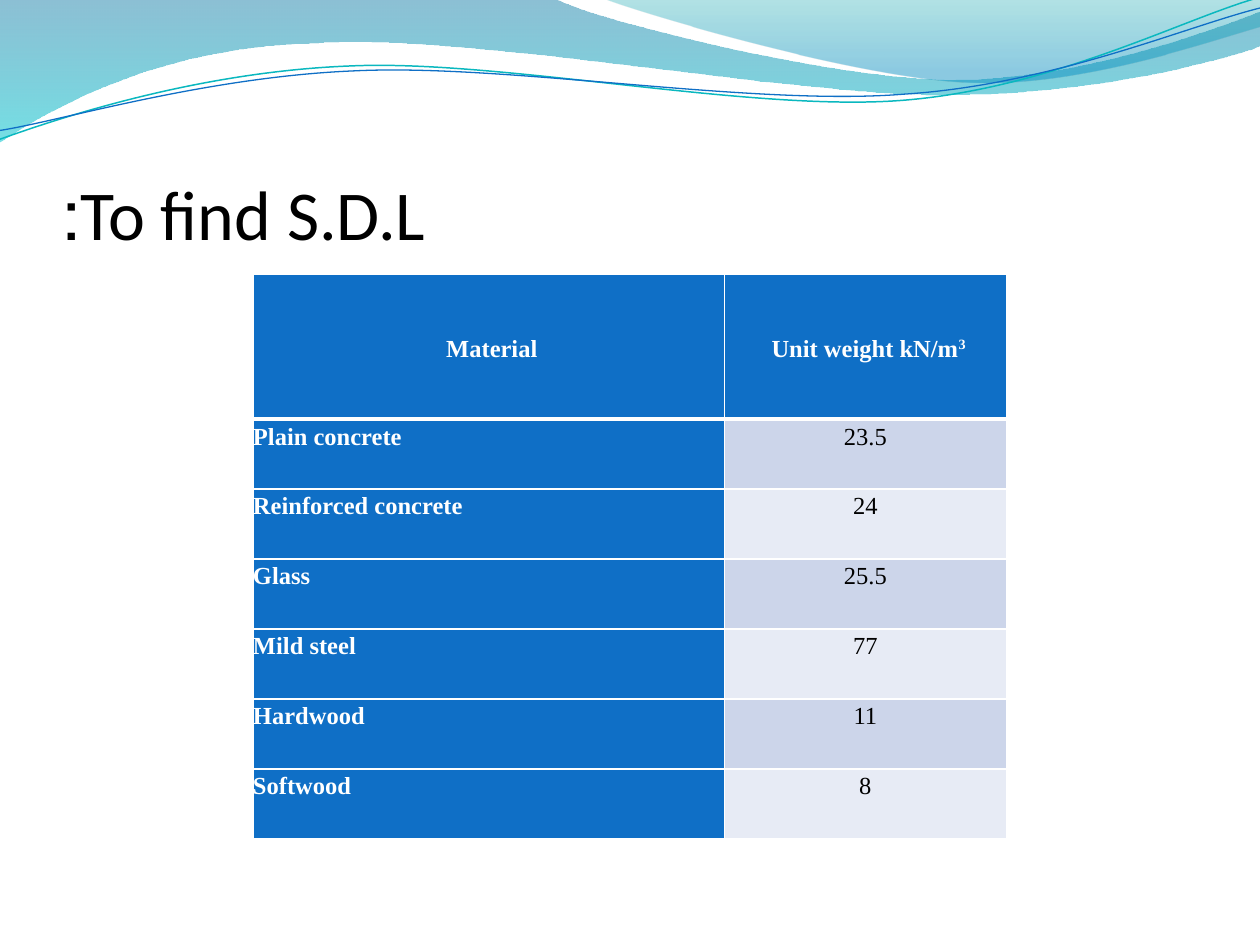
from lxml import etree
from pptx import Presentation
from pptx.dml.color import RGBColor
from pptx.enum.text import MSO_ANCHOR, PP_ALIGN
from pptx.oxml.ns import qn
from pptx.util import Cm, Pt

LEFT, CENTER = PP_ALIGN.LEFT, PP_ALIGN.CENTER
MIDDLE, BOTTOM = MSO_ANCHOR.MIDDLE, MSO_ANCHOR.BOTTOM
INCH = 2.54  # centimetres


def color(hex_code):
    return RGBColor.from_string(hex_code)


def add_wave(shapes, segments, closed):
    """Draw segments of one point (line) or three points (cubic curve)."""
    points = [(Cm(x * INCH), Cm(y * INCH))
              for seg in segments for x, y in zip(seg[::2], seg[1::2])]
    builder = shapes.build_freeform(*points[0])
    builder.add_line_segments(points[1:], close=closed)
    s = builder.convert_to_shape()
    s.shadow.inherit = False

    # Join each run of three points into one curve
    lines = iter(list(s._element.iter(qn("a:lnTo"))))
    for seg in segments[1:]:
        line = next(lines)
        if len(seg) == 6:
            line.tag = qn("a:cubicBezTo")
            for _ in range(2):
                extra = next(lines)
                line.append(extra[0])
                extra.getparent().remove(extra)
    return s


prs = Presentation()
prs.slide_width, prs.slide_height = Cm(25.4), Cm(19.05)
slide = prs.slides.add_slide(prs.slide_layouts[6])

# Gradient waves: outline in inches, then (position, colour, opacity %) stops
bands = [
    ([(0, 0), (4.4, -0.01), (4.76, 0.17, 6.64, 0.63, 7.58, 0.63),
      (8.53, 0.63, 9.58, 0.26, 10, 0.09), (10.01, 0.36),
      (9.83, 0.44, 8.7, 0.76, 7.46, 0.75), (6.22, 0.75, 3.82, 0.28, 2.57, 0.34),
      (1.29, 0.36, 0.46, 0.83, -0.01, 1.13)],
     [(0, "0074A1", 45), (1, "00C6CF", 55)]),
    ([(4.79, -0.01), (5.09, 0.11, 6.82, 0.62, 7.69, 0.65),
      (8.56, 0.69, 9.61, 0.32, 10, 0.21), (10, 0)],
     [(0, "00A1A9", 30), (0.8, "008BBF", 45)]),
]
for outline, stops in bands:
    s = add_wave(slide.shapes, outline, True)
    s.line.fill.background()
    s.fill.gradient()
    s.fill.gradient_angle = 270
    for stop, (position, hex_code, _) in zip(s.fill.gradient_stops, stops):
        stop.position = position
        stop.color.rgb = color(hex_code)
    for rgb, (_, _, opacity) in zip(s._element.spPr.iter(qn("a:srgbClr")), stops):
        etree.SubElement(rgb, qn("a:alpha")).set("val", str(opacity * 1000))

# Thin wave lines, slightly turned
strands = [
    ([(-0.02, 0.87), (0.47, 0.72, 1.58, 0.41, 2.78, 0.42),
      (3.96, 0.42, 5.91, 0.93, 7.12, 0.9), (8.32, 0.87, 9.4, 0.36, 10, 0.22)],
     "0AB8BF", 0.85),
    ([(-0.02, 0.8), (0.46, 0.75, 1.64, 0.45, 2.83, 0.46),
      (4.03, 0.46, 5.96, 0.89, 7.16, 0.85), (8.35, 0.83, 9.42, 0.42, 10.02, 0.3)],
     "0F6FC6", 0.75),
]
group = slide.shapes.add_group_shape()
for outline, hex_code, width in strands:
    s = add_wave(group.shapes, outline, False)
    s.rotation = 357.3
    s.fill.background()
    s.line.color.rgb = color(hex_code)
    s.line.width = Pt(width)

# Title, set right to left so the colon falls on the left
tf = slide.shapes.add_textbox(Cm(1.27), Cm(1.96), Cm(22.86), Cm(3.18)).text_frame
tf.word_wrap = True
tf.vertical_anchor = BOTTOM
tf.margin_left = tf.margin_right = tf.margin_bottom = 0
tf.text = "To find S.D.L:"
p = tf.paragraphs[0]
p.alignment = LEFT
p._p.get_or_add_pPr().set("rtl", "1")
r = p.runs[0]
r.font.size, r.font.name = Pt(40), "Calibri"
r.font.color.rgb = color("000000")

# Table of unit weights
rows = [("Material", "Unit weight kN/m"), ("Plain concrete", "23.5"),
        ("Reinforced concrete", "24"), ("Glass", "25.5"), ("Mild steel", "77"),
        ("Hardwood", "11"), ("Softwood", "8")]
table = slide.shapes.add_table(len(rows), 2, Cm(5.1), Cm(5.53),
                               Cm(15.19), Cm(11.38)).table
table.columns[0].width, table.columns[1].width = Cm(9.5), Cm(5.69)
for i, texts in enumerate(rows):
    table.rows[i].height = Cm(1.41 if i else 2.92)
    for j, text in enumerate(texts):
        cell = table.cell(i, j)
        is_label = i == 0 or j == 0
        cell.margin_left = cell.margin_right = cell.margin_top = cell.margin_bottom = 0
        cell.fill.solid()
        band = "CCD5EA" if i % 2 else "E7EBF5"
        cell.fill.fore_color.rgb = color("0F6FC6" if is_label else band)
        cell.text = text
        p = cell.text_frame.paragraphs[0]
        p.line_spacing = 1.15
        p.alignment = LEFT if i and j == 0 else CENTER
        if i == 0:
            cell.vertical_anchor = MIDDLE
            p._p.get_or_add_pPr().set("indent", str(Cm(0.13)))
            if j == 1:
                r = p.add_run()
                r.text = "3"
                r.font._element.set("baseline", "30000")
        for r in p.runs:
            r.font.size, r.font.name, r.font.bold = Pt(14), "Times New Roman", is_label
            r.font.color.rgb = color("FFFFFF" if is_label else "000000")

        # White borders, thicker under the header
        tc_pr = cell._tc.get_or_add_tcPr()
        for k, side in enumerate(("lnL", "lnR", "lnT", "lnB")):
            thick = (i, side) in ((0, "lnB"), (1, "lnT"))
            ln = etree.Element(qn("a:" + side), w=str(Pt(3 if thick else 1)))
            fill = etree.SubElement(ln, qn("a:solidFill"))
            etree.SubElement(fill, qn("a:srgbClr")).set("val", "FFFFFF")
            tc_pr.insert(k, ln)

prs.save("out.pptx")
